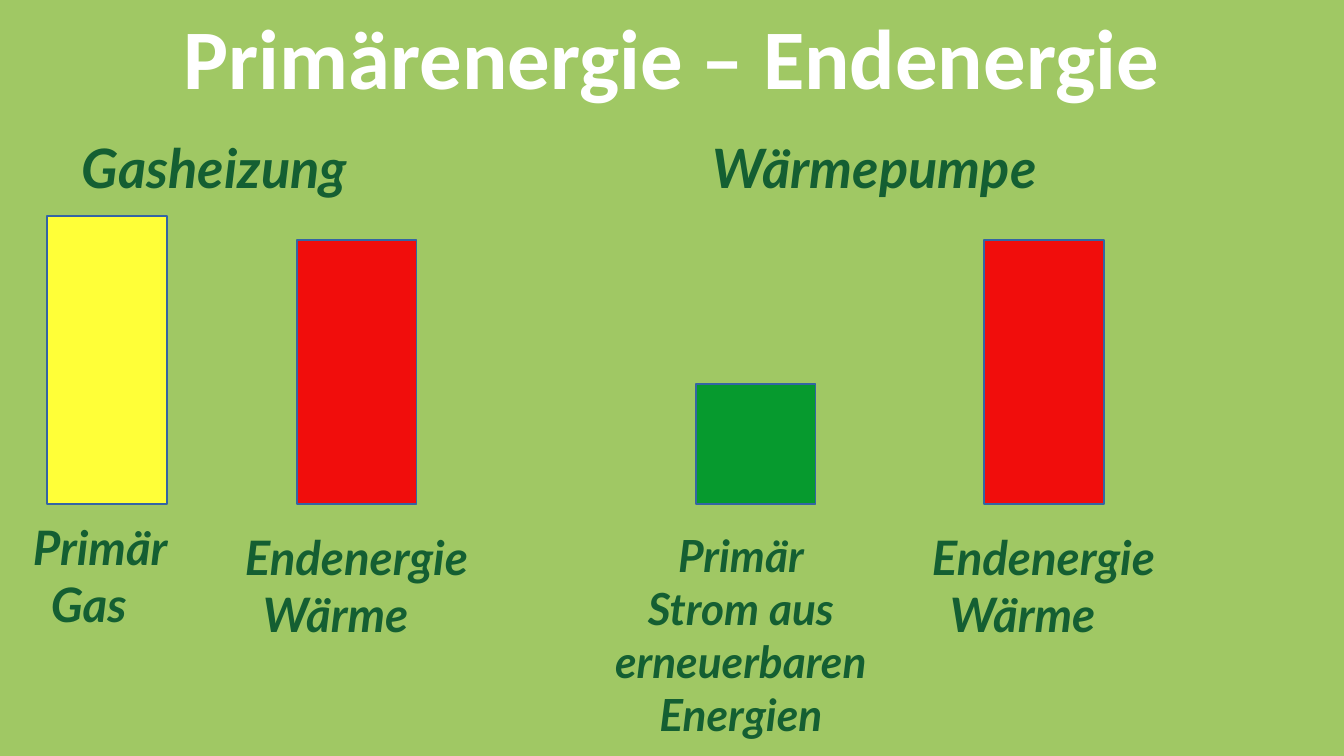
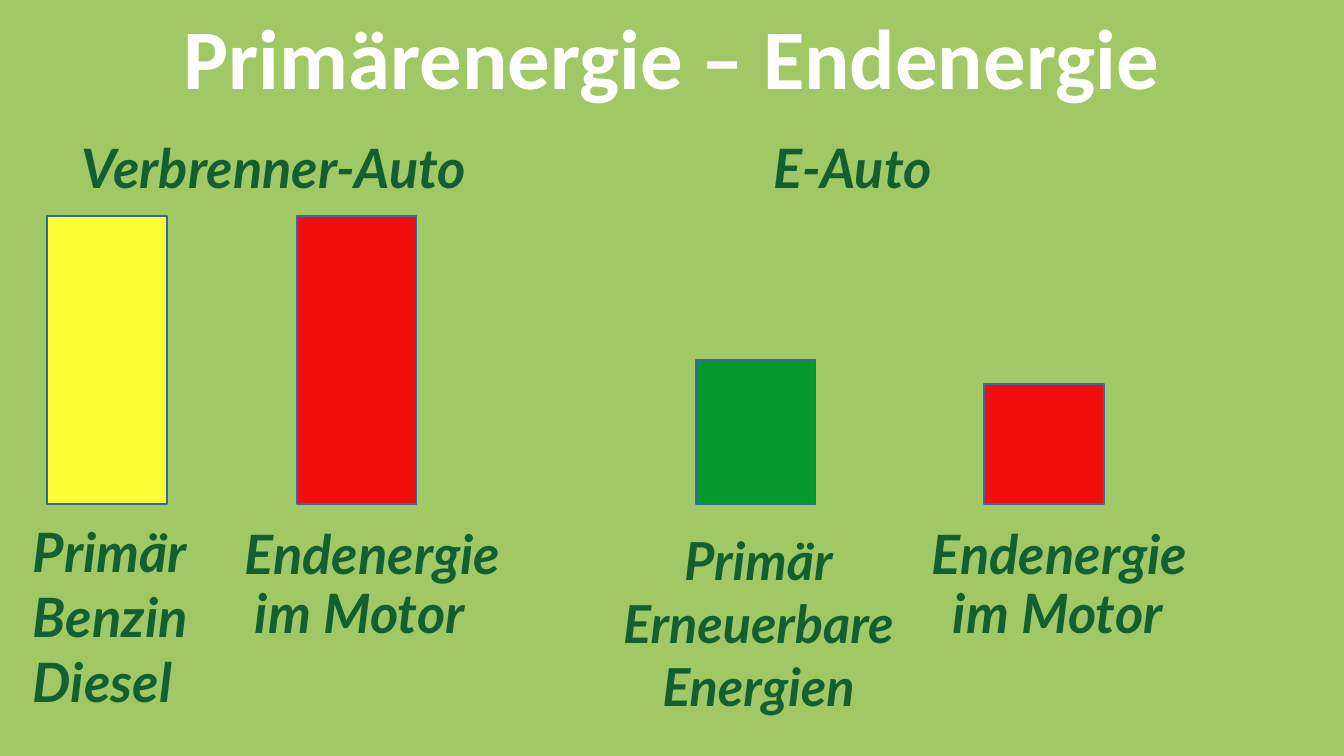
from pptx import Presentation, util as u
from pptx.dml.color import RGBColor
from pptx.enum import shapes, text

COLORS = {
    "background": "A0C864", "title": "FFFFFF", "label": "145F32", "outline": "3465A4",
    "fossil": "FFFF38", "final": "F10D0C", "renewable": "069A2E",
}
TITLE = "Primärenergie – Endenergie"
LEFT, CENTER = text.PP_ALIGN.LEFT, text.PP_ALIGN.CENTER

SLIDES = [
    {
        "headings": [("Gasheizung", 82), ("Wärmepumpe", 713)],
        "bars": [("fossil", 12), ("final", 11), ("renewable", 5), ("final", 11)],
        "labels": [
            {"lines": [("Primär", 0), ("Gas", 18)], "box": (33, 518, 193, 129), "size": 28},
            {"lines": [("Endenergie", 0), ("Wärme", 18)], "box": (245, 528, 280, 129), "size": 28},
            {"lines": [("Primär", 0), ("Strom aus erneuerbaren", 0), ("Energien", 0)],
             "box": (561, 528, 360, 216), "size": 26.1, "align": CENTER},
            {"lines": [("Endenergie", 0), ("Wärme", 18)], "box": (932, 528, 280, 129), "size": 28},
        ],
    },
    {
        "headings": [("Verbrenner-Auto", 82), ("E-Auto", 774)],
        "bars": [("fossil", 12), ("final", 12), ("renewable", 6), ("final", 5)],
        "labels": [
            {"lines": [("Primär", 0), ("Benzin", 0), ("Diesel", 0)],
             "box": (33, 518, 193, 226), "size": 32},
            {"lines": [("Endenergie", 0), ("im Motor", 10)],
             "box": (245, 528, 280, 129), "size": 32, "spacing": 0.9},
            {"lines": [("Primär", 0), ("Erneuerbare", 0), ("Energien", 0)],
             "box": (595, 528, 327, 192), "size": 30.9, "align": CENTER},
            {"lines": [("Endenergie", 0), ("im Motor", 21)],
             "box": (932, 528, 280, 129), "size": 32, "spacing": 0.9},
        ],
    },
]

SLIDE_SIZE = (1344, 756)
TITLE_BOX = (67, 5, 1210, 101)
HEADING_TOP, HEADING_WIDTH, HEADING_HEIGHT = 134, 480, 70
BAR_LEFTS = (47, 297, 696, 984)
BAR_WIDTH, BAR_BASE, BAR_UNIT = 120, 504, 24
FRAME = {
    "margin_left": 0, "margin_top": 0, "margin_right": 0, "margin_bottom": 0,
    "word_wrap": True, "auto_size": text.MSO_AUTO_SIZE.NONE,
}
TITLE_FONT = {"name": "Calibri", "size": u.Pt(50), "bold": True}
LABEL_FONT = {"name": "Lato", "bold": True, "italic": True}


def px(length):
    return u.Emu(round(length * 914400 / 122))


def color(name):
    return RGBColor.from_string(COLORS[name])


def apply(target, values):
    for attribute, value in values.items():
        setattr(target, attribute, value)


def place_title(slide):
    title = slide.shapes.title
    apply(title, dict(zip(("left", "top", "width", "height"), map(px, TITLE_BOX))))
    frame = title.text_frame
    apply(frame, {**FRAME, "vertical_anchor": text.MSO_ANCHOR.MIDDLE})
    frame.text = TITLE
    paragraph = frame.paragraphs[0]
    paragraph.alignment = CENTER
    apply(paragraph.font, TITLE_FONT)
    paragraph.font.color.rgb = color("title")


def add_label(slide, lines, box, size, align=LEFT, spacing=1.0):
    frame = slide.shapes.add_textbox(*map(px, box)).text_frame
    apply(frame, FRAME)
    for number, (line, indent) in enumerate(lines):
        paragraph = frame.add_paragraph() if number else frame.paragraphs[0]
        paragraph.text = line
        apply(paragraph, {"alignment": align, "line_spacing": spacing})
        if indent:
            paragraph._p.get_or_add_pPr().set("marL", str(px(indent)))
        apply(paragraph.font, {**LABEL_FONT, "size": u.Pt(size)})
        paragraph.font.color.rgb = color("label")


def add_bar(slide, left, energy, units):
    height = units * BAR_UNIT
    bar = slide.shapes.add_shape(
        shapes.MSO_SHAPE.RECTANGLE,
        *map(px, (left, BAR_BASE - height, BAR_WIDTH, height)))
    bar.shadow.inherit = False
    bar.fill.solid()
    bar.fill.fore_color.rgb = color(energy)
    bar.line.color.rgb = color("outline")
    bar.line.width = 0


def main():
    deck = Presentation()
    deck.slide_width, deck.slide_height = map(px, SLIDE_SIZE)
    background = deck.slide_master.background.fill
    background.solid()
    background.fore_color.rgb = color("background")

    for content in SLIDES:
        slide = deck.slides.add_slide(deck.slide_layouts[5])
        place_title(slide)
        for left, (energy, units) in zip(BAR_LEFTS, content["bars"]):
            add_bar(slide, left, energy, units)
        for heading, left in content["headings"]:
            add_label(slide, [(heading, 0)],
                      (left, HEADING_TOP, HEADING_WIDTH, HEADING_HEIGHT), 32)
        for label in content["labels"]:
            add_label(slide, **label)

    deck.save("out.pptx")


if __name__ == "__main__":
    main()
